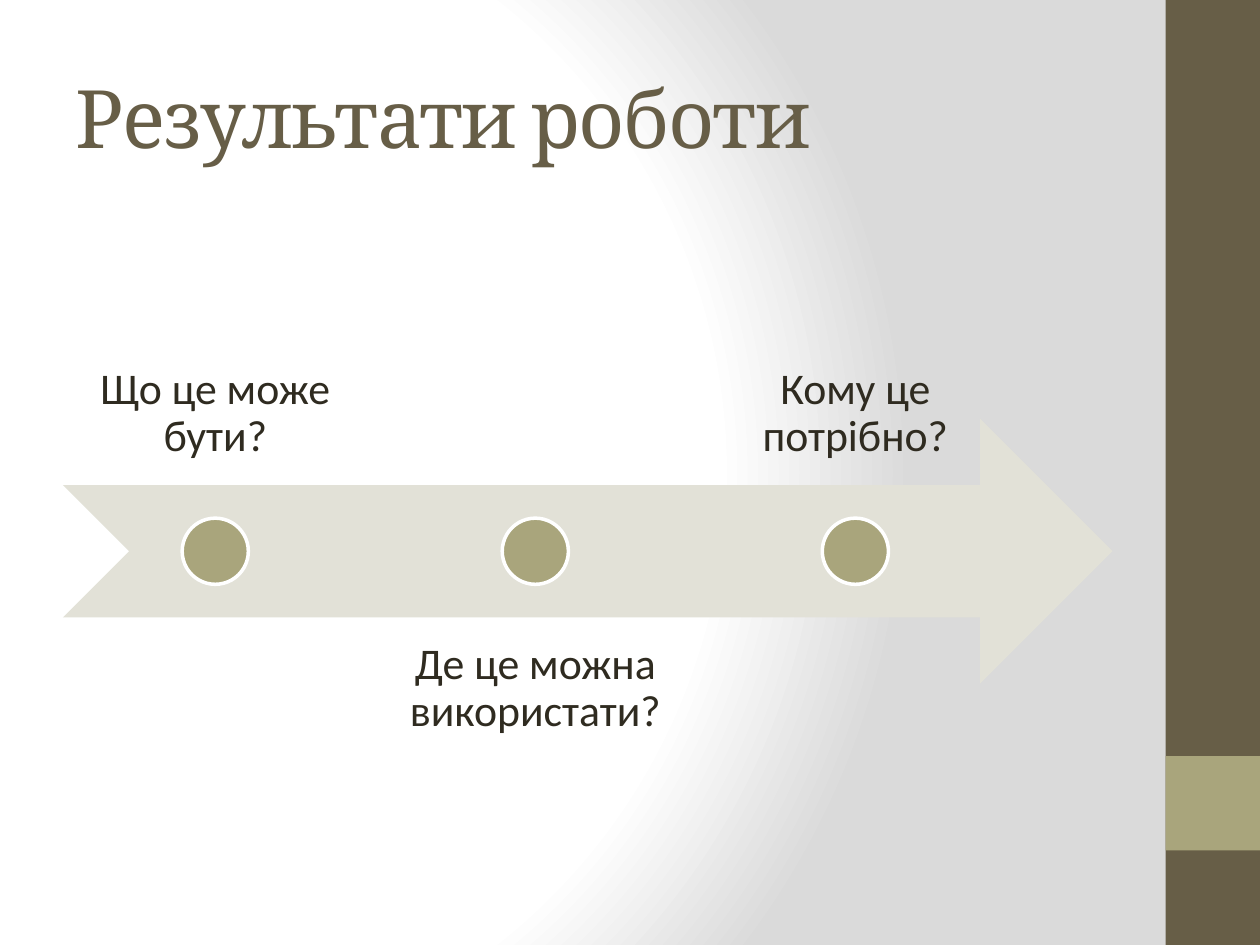
from pptx import Presentation
from pptx.dml.color import RGBColor
from pptx.enum.shapes import MSO_SHAPE
from pptx.enum.text import MSO_ANCHOR, MSO_AUTO_SIZE, PP_ALIGN
from pptx.oxml import parse_xml
from pptx.oxml.ns import nsdecls
from pptx.util import Inches, Pt

BROWN = RGBColor(0x67, 0x5E, 0x47)
OLIVE = RGBColor(0xA9, 0xA5, 0x7C)
SAND = RGBColor(0xE2, 0xE1, 0xD7)
INK = RGBColor(0x2F, 0x2B, 0x20)
WHITE = RGBColor(0xFF, 0xFF, 0xFF)
GREY = RGBColor(0xDA, 0xDA, 0xDA)


class Deck:
    """Style and current slide; lengths are in cells of a 40 x 30 grid."""
    HEAD_FONT, BODY_FONT = "Cambria", "Calibri"
    COLS, ROWS = 40, 30

    def __init__(self):
        self.prs = Presentation()
        self.prs.slide_width, self.prs.slide_height = Inches(10), Inches(7.5)
        self.s = self.prs.slides.add_slide(self.prs.slide_layouts[5])
        self.shapes = self.s.shapes

    def box(self, x, y, w, h):
        col = self.prs.slide_width / self.COLS
        row = self.prs.slide_height / self.ROWS
        return round(x * col), round(y * row), round(w * col), round(h * row)

    def background(self, stops):
        gs = "".join(f'<a:gs pos="{pos * 1000}"><a:srgbClr val="{color}"/></a:gs>'
                     for pos, color in stops)
        bg = parse_xml(
            f'<p:bg {nsdecls("p", "a")}><p:bgPr><a:gradFill rotWithShape="1">'
            f'<a:gsLst>{gs}</a:gsLst><a:path path="circle">'
            '<a:fillToRect l="20000" t="50000" r="100000" b="50000"/></a:path>'
            '</a:gradFill><a:effectLst/></p:bgPr></p:bg>')
        self.s.element.cSld.insert(0, bg)

    def title(self, text, *cells):
        sp = self.s.shapes.title
        sp.left, sp.top, sp.width, sp.height = self.box(*cells)
        tf = sp.text_frame
        tf.text = text
        tf.auto_size = MSO_AUTO_SIZE.NONE
        tf.vertical_anchor = MSO_ANCHOR.MIDDLE
        p = tf.paragraphs[0]
        p.alignment = PP_ALIGN.LEFT
        p.font.name, p.font.size, p.font.color.rgb = self.HEAD_FONT, Pt(46), BROWN
        p.runs[0].font._element.set("spc", "-100")

    def shape(self, kind, fill, *cells, line=None):
        sp = self.shapes.add_shape(kind, *self.box(*cells))
        sp.shadow.inherit = False
        sp.fill.solid()
        sp.fill.fore_color.rgb = fill
        if line is None:
            sp.line.fill.background()
        else:
            sp.line.color.rgb, sp.line.width = line, Pt(2)

    def label(self, text, anchor, *cells):
        tf = self.shapes.add_textbox(*self.box(*cells)).text_frame
        tf.word_wrap = True
        tf.vertical_anchor = anchor
        tf.margin_left = tf.margin_right = Inches(0.19)
        tf.margin_top = tf.margin_bottom = Inches(0.19)
        p = tf.paragraphs[0]
        p.text = text
        p.alignment, p.line_spacing = PP_ALIGN.CENTER, 0.9
        p.font.name, p.font.size, p.font.color.rgb = self.BODY_FONT, Pt(25), INK


def main():
    deck = Deck()
    deck.background([(0, WHITE), (75, WHITE), (100, GREY)])

    # Side band with its accent square
    deck.shape(MSO_SHAPE.RECTANGLE, BROWN, 37, 0, 3, 30)
    deck.shape(MSO_SHAPE.RECTANGLE, OLIVE, 37, 24, 3, 3)

    deck.title("Результати роботи", 2, 1.2, 33.32, 5)

    # Timeline: arrow, then labels above and below it in turn
    left, top, height = 2, 7, 8.4
    label_w, pitch, dot = 9.67, 10.16, 2.1
    arrow_y = top + 0.75 * height
    deck.shapes = deck.s.shapes.add_group_shape().shapes
    deck.shape(MSO_SHAPE.NOTCHED_RIGHT_ARROW, SAND, left, arrow_y, 33.32, height)
    steps = ["Що це може бути?", "Де це можна використати?", "Кому це потрібно?"]
    for i, text in enumerate(steps):
        x = left + i * pitch
        if i % 2:
            deck.label(text, MSO_ANCHOR.TOP, x, top + 1.5 * height, label_w, height)
        else:
            deck.label(text, MSO_ANCHOR.BOTTOM, x, top, label_w, height)
        deck.shape(MSO_SHAPE.OVAL, OLIVE, x + (label_w - dot) / 2,
                   arrow_y + (height - dot) / 2, dot, dot, line=WHITE)

    deck.prs.save("out.pptx")


if __name__ == "__main__":
    main()
